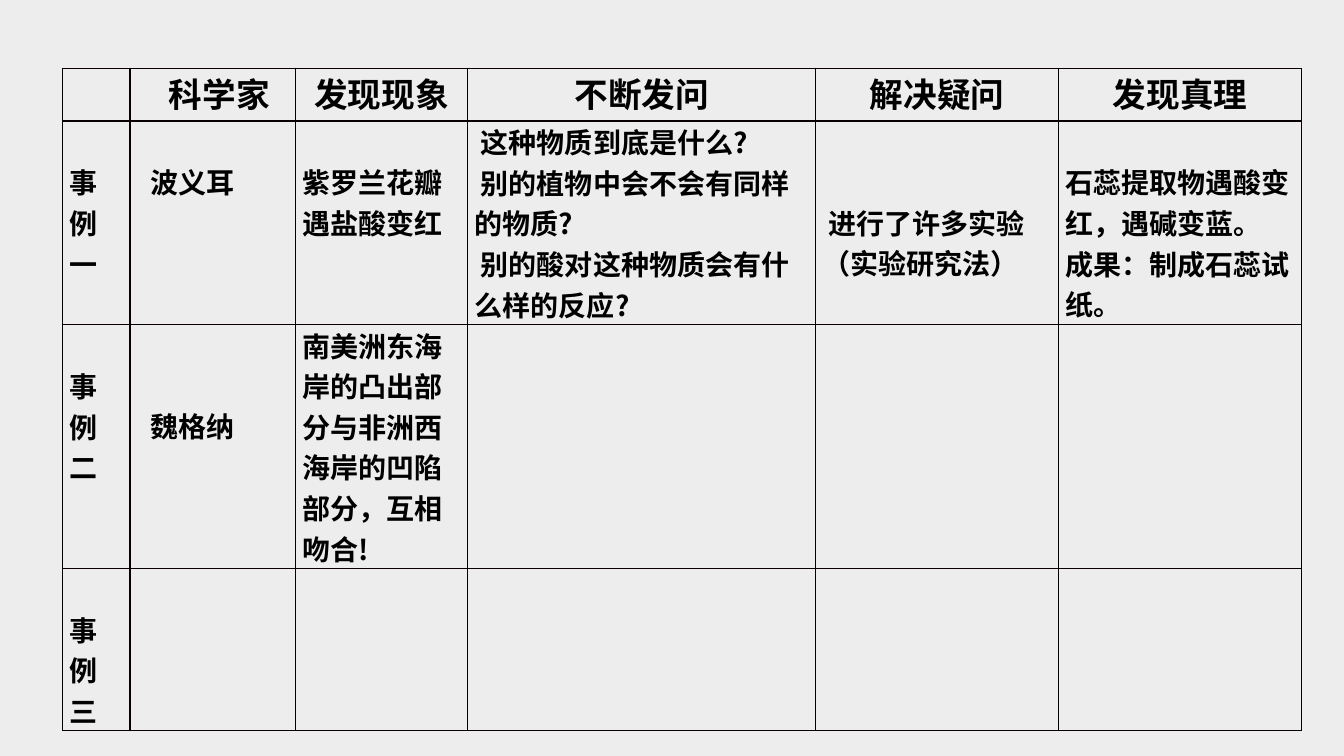
from lxml.etree import SubElement
from pptx import Presentation
from pptx.dml.color import RGBColor
from pptx.enum.text import PP_ALIGN
from pptx.oxml.ns import qn
from pptx.util import Inches, Pt

# Content
COLORS = {"background": "EDEDED", "text": "000000", "border": "080000"}
FONT = "Noto Sans CJK SC"
HEADINGS = ["", "科学家", "发现现象", "不断发问", "解决疑问", "发现真理"]
CASES = [
    [["事例一"], ["波义耳"], ["紫罗兰花瓣遇盐酸变红"],
     ["这种物质到底是什么?", "别的植物中会不会有同样的物质?",
      "别的酸对这种物质会有什么样的反应?"],
     ["进行了许多实验（实验研究法）"],
     ["石蕊提取物遇酸变红，遇碱变蓝。", "成果：制成石蕊试纸。"]],
    [["事例二"], ["魏格纳"],
     ["南美洲东海岸的凸出部分与非洲西海岸的凹陷部分，互相吻合!"], [], [], []],
    [["事例三"], [], [], [], [], []],
]
# Lines of space above the text of each case
LINES_ABOVE = [[1, 1, 1, 0, 2, 1], [1, 2, 0, 0, 0, 0], [1, 0, 0, 0, 0, 0]]

# Layout
LEFT, TOP = 0.62, 0.68
COLUMN_WIDTHS = [0.67, 1.64, 1.71, 3.45, 2.41, 2.41]
ROW_HEIGHTS = [0.52, 2.02, 2.42, 1.61]
LINE_HEIGHT = 0.4
SIDE_MARGIN = 0.07
SCIENTIST_COLUMN, SCIENTIST_INDENT = 1, 0.13
FIRST_LINE_INDENTS = {3: 0.06, 4: 0.06}


def add_borders(cell):
    properties = cell._tc.get_or_add_tcPr()
    for side in ("lnL", "lnR", "lnT", "lnB"):
        line = SubElement(properties, qn(f"a:{side}"), w=str(Pt(1)))
        fill = SubElement(line, qn("a:solidFill"))
        SubElement(fill, qn("a:srgbClr"), val=COLORS["border"])


def write_cell(cell, column, lines, size, align, lines_above=0, first_indent=0):
    add_borders(cell)
    cell.fill.background()
    indent = SCIENTIST_INDENT if column == SCIENTIST_COLUMN else 0
    cell.margin_left = Inches(SIDE_MARGIN + indent)
    cell.margin_right = Inches(SIDE_MARGIN)
    cell.margin_top = Inches(lines_above * LINE_HEIGHT)
    cell.margin_bottom = 0
    cell.text = "\n".join(lines)
    for paragraph in cell.text_frame.paragraphs:
        paragraph.alignment = align
        font = paragraph.font
        font.name, font.size, font.bold = FONT, Pt(size), True
        font.color.rgb = RGBColor.from_string(COLORS["text"])
        SubElement(font._element, qn("a:ea"), typeface=FONT)
        if first_indent:
            paragraph._p.get_or_add_pPr().set("indent", str(Inches(first_indent)))


def main():
    presentation = Presentation()
    presentation.slide_width = Inches(13.33)
    presentation.slide_height = Inches(7.5)
    slide = presentation.slides.add_slide(presentation.slide_layouts[6])
    background = slide.background.fill
    background.solid()
    background.fore_color.rgb = RGBColor.from_string(COLORS["background"])

    # Table grid
    table = slide.shapes.add_table(
        len(ROW_HEIGHTS), len(COLUMN_WIDTHS), Inches(LEFT), Inches(TOP),
        Inches(sum(COLUMN_WIDTHS)), Inches(sum(ROW_HEIGHTS))).table
    table.horz_banding = False
    for column, width in zip(table.columns, COLUMN_WIDTHS):
        column.width = Inches(width)
    for row, height in zip(table.rows, ROW_HEIGHTS):
        row.height = Inches(height)

    # Headings
    for column, heading in enumerate(HEADINGS):
        write_cell(table.cell(0, column), column, [heading], 24, PP_ALIGN.CENTER)

    # Cases
    for row, (case, spaces) in enumerate(zip(CASES, LINES_ABOVE), start=1):
        for column, (lines, space) in enumerate(zip(case, spaces)):
            write_cell(table.cell(row, column), column, lines, 20, PP_ALIGN.LEFT,
                       space, FIRST_LINE_INDENTS.get(column, 0))

    presentation.save("out.pptx")


if __name__ == "__main__":
    main()
